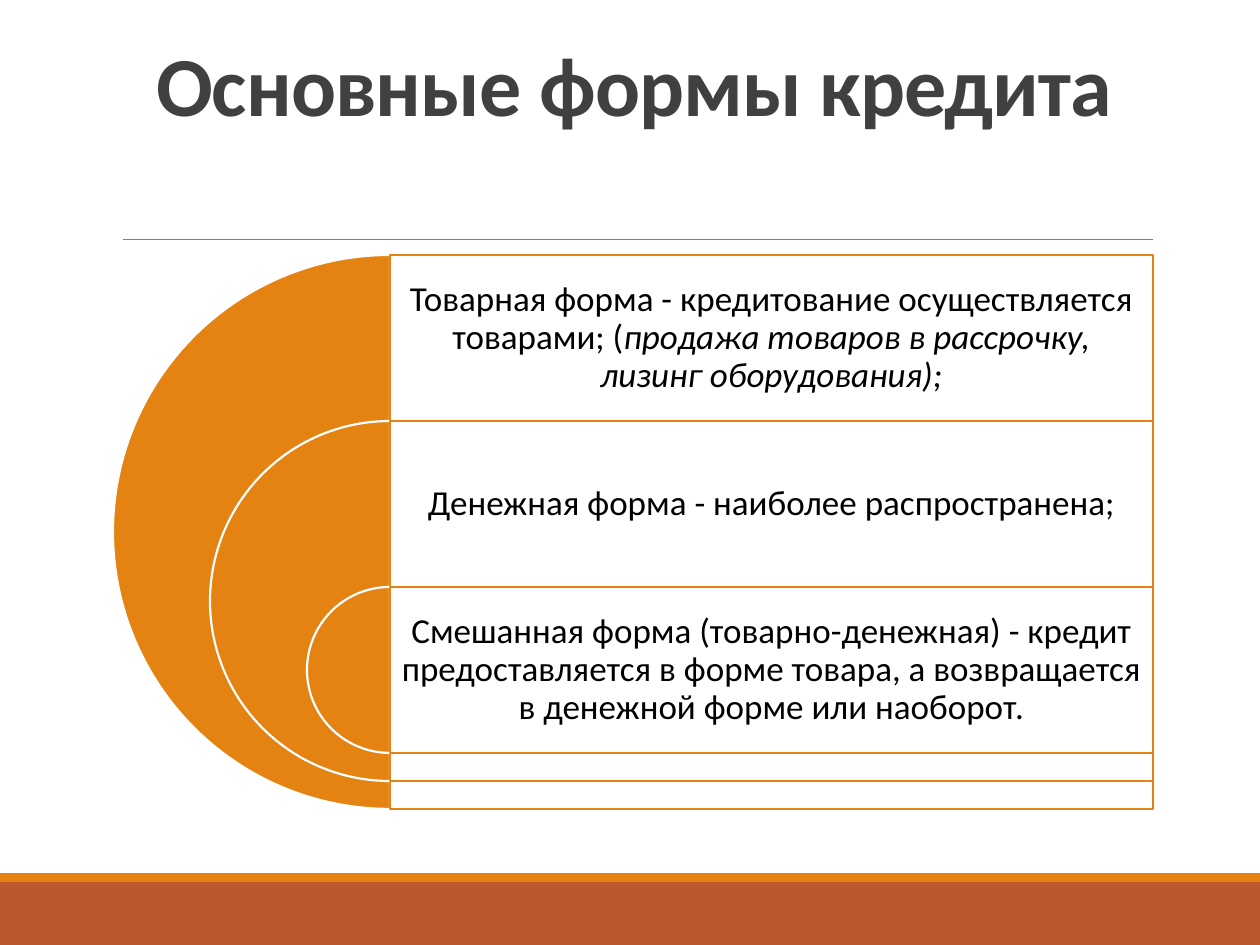
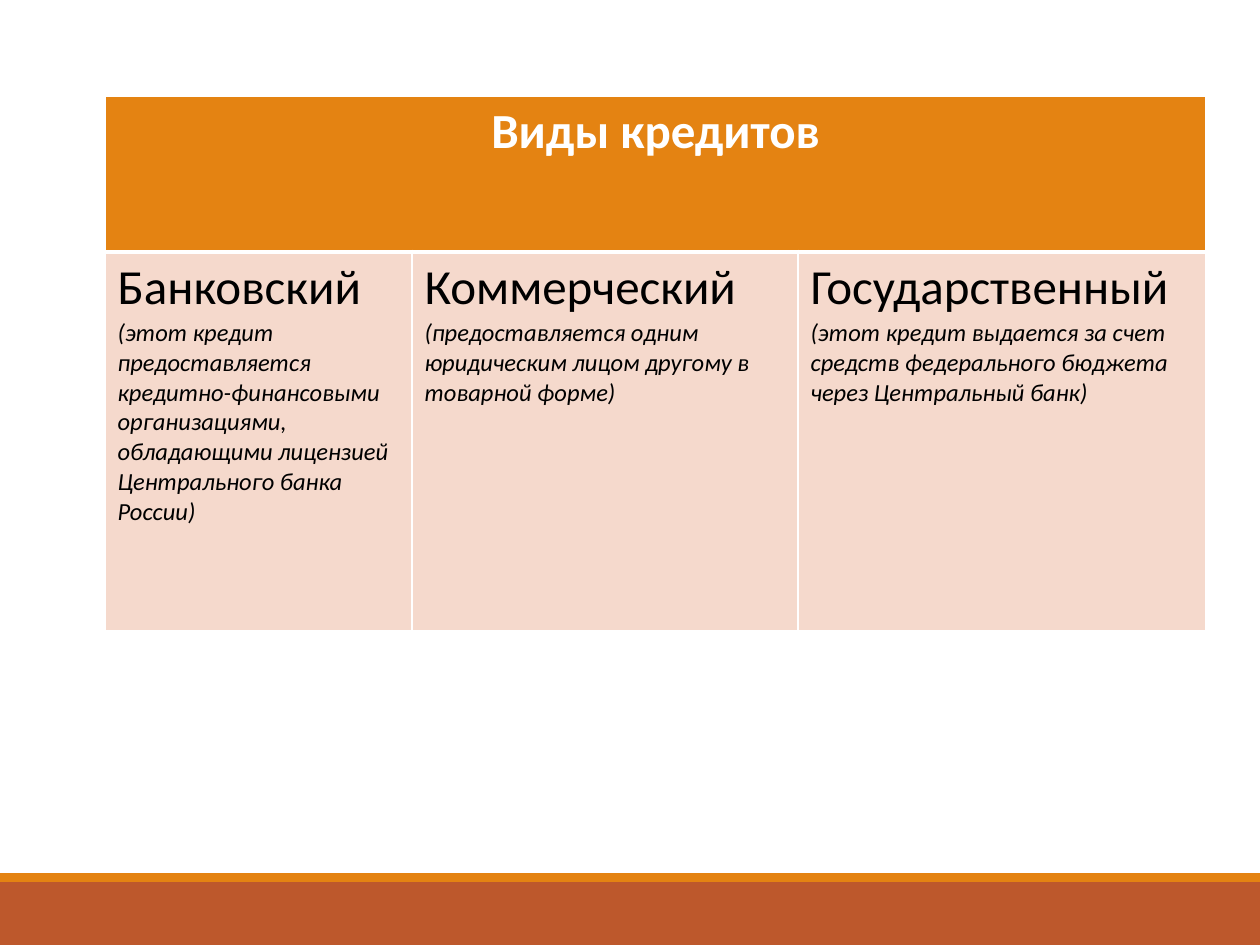
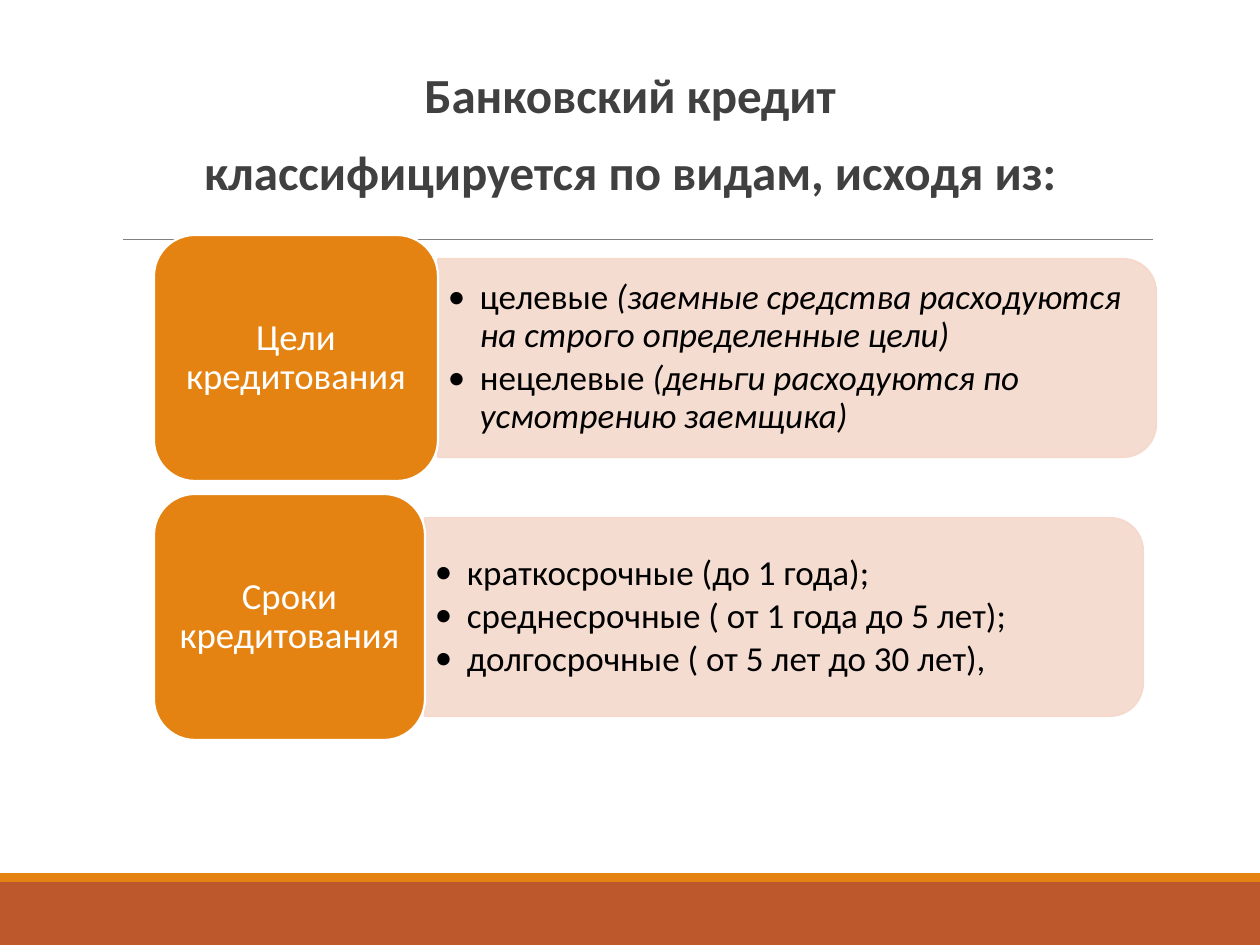
from dataclasses import dataclass

from lxml import etree
from pptx import Presentation
from pptx import util as u
from pptx.dml.color import RGBColor
from pptx.enum import shapes, text
from pptx.oxml.ns import qn

SCALE = u.Inches(1) / 126  # EMU in one px
CENTER = text.PP_ALIGN.CENTER
MIDDLE = text.MSO_ANCHOR.MIDDLE


@dataclass(frozen=True)
class Theme:
    font: str = "Calibri"
    orange: str = "E48312"
    rust: str = "BD582C"
    blush: str = "F5D9CC"
    white: str = "FFFFFF"
    black: str = "000000"
    heading: str = "404040"
    rule: str = "808080"
    title: int = 48
    subtitle: int = 28
    label: int = 21
    body: int = 20
    note: int = 14
    outline: float = 1.25
    hairline: float = 0.5


@dataclass(frozen=True)
class Span:
    text: str
    size: int = Theme.body
    color: str = Theme.black
    bold: bool = False
    italic: bool = False


def px(*lengths):
    return [u.Emu(round(length * SCALE)) for length in lengths]


def rgb(color):
    return RGBColor.from_string(color)


def add_alpha(element, percent):
    for color in element.iter(qn("a:srgbClr")):
        etree.SubElement(color, qn("a:alpha")).set("val", str(percent * 1000))


def add_bullet(para, indent):
    properties = para._p.get_or_add_pPr()
    width = px(indent)[0]
    properties.set("marL", str(width))
    properties.set("indent", str(-width))
    etree.SubElement(properties, qn("a:buFont")).set("typeface", Theme.font)
    etree.SubElement(properties, qn("a:buChar")).set("char", "•")


def add_borders(cell, color, **widths):
    """Draw cell edges; widths maps L, R, T, B to points. Call before the fill is set."""
    properties = cell._tc.get_or_add_tcPr()
    for side, width in widths.items():
        line = etree.SubElement(properties, qn(f"a:ln{side}"), w=str(u.Pt(width)))
        fill = etree.SubElement(line, qn("a:solidFill"))
        etree.SubElement(fill, qn("a:srgbClr"), val=color)


class Deck:
    def __init__(self, theme):
        self.theme = theme
        self.deck = Presentation()
        self.deck.slide_width, self.deck.slide_height = px(1260, 945)
        self.page = None

    def add_page(self):
        theme = self.theme
        self.page = self.deck.slides.add_slide(self.deck.slide_layouts[6])
        rect = shapes.MSO_SHAPE.RECTANGLE
        self.shape(rect, (0, 882, 1260, 63), theme.rust)
        self.shape(rect, (0, 873, 1260, 9), theme.orange)
        self.rule(123, 239, 1153)

    def rule(self, left, top, right):
        line = self.page.shapes.add_connector(
            shapes.MSO_CONNECTOR.STRAIGHT, *px(left, top, right, top))
        line.line.color.rgb = rgb(self.theme.rule)
        line.line.width = u.Pt(self.theme.hairline)
        etree.SubElement(line._element.spPr, qn("a:effectLst"))

    def shape(self, kind, box, fill, line=None, alpha=None):
        shape = self.page.shapes.add_shape(kind, *px(*box))
        shape.shadow.inherit = False
        shape.fill.solid()
        shape.fill.fore_color.rgb = rgb(fill)
        if alpha:
            add_alpha(shape._element.spPr, alpha)
        if line:
            shape.line.color.rgb = rgb(line)
            shape.line.width = u.Pt(self.theme.outline)
        else:
            shape.line.fill.background()
        return shape

    def set_spans(self, frame, paragraphs, align=None, spacing=None, before=None,
                  after=None, bullet_indent=None):
        """Fill a text frame; each paragraph is a list of spans."""
        for index, spans in enumerate(paragraphs):
            para = frame.add_paragraph() if index else frame.paragraphs[0]
            para.alignment = align
            para.line_spacing = spacing
            if before is not None:
                para.space_before = u.Pt(before)
            if after is not None:
                para.space_after = u.Pt(after)
            if bullet_indent:
                add_bullet(para, bullet_indent)
            for span in spans:
                run = para.add_run()
                run.text = span.text
                font = run.font
                font.name, font.size = self.theme.font, u.Pt(span.size)
                font.bold, font.italic = span.bold, span.italic
                font.color.rgb = rgb(span.color)

    def frame(self, shape, insets, anchor):
        frame = shape.text_frame
        frame.word_wrap = True
        frame.vertical_anchor = anchor
        side, edge = px(*insets)
        frame.margin_left = frame.margin_right = side
        frame.margin_top = frame.margin_bottom = edge
        return frame

    def text(self, box, paragraphs, insets=(10, 10), anchor=MIDDLE, **style):
        shape = self.page.shapes.add_textbox(*px(*box))
        frame = self.frame(shape, insets, anchor)
        self.set_spans(frame, paragraphs, **style)
        return frame

    def title(self, box, words):
        theme = self.theme
        span = Span(words, theme.title, theme.heading, bold=True)
        frame = self.text(box, [[span]], insets=(12, 6),
                          anchor=text.MSO_ANCHOR.BOTTOM, spacing=0.85)
        frame.paragraphs[0].runs[0].font._element.set("spc", "-50")

    def half_circle(self, center_x, top, diameter):
        """Left half of a circle whose flat side stands at center_x."""
        box = (center_x - diameter // 2, top, diameter, diameter)
        pie = self.shape(shapes.MSO_SHAPE.PIE, box, self.theme.orange,
                         self.theme.white)
        pie.adjustments[0], pie.adjustments[1] = 54, 162

    def label(self, box, words):
        theme = self.theme
        shape = self.shape(shapes.MSO_SHAPE.ROUNDED_RECTANGLE, box,
                           theme.orange, theme.white)
        frame = self.frame(shape, (11, 5), MIDDLE)
        self.set_spans(frame, [[Span(words, theme.label, theme.white)]],
                       align=CENTER, spacing=0.9)

    def bullet_panel(self, box, paragraphs):
        """Panel with rounded right corners and a bulleted list over it."""
        left, top, width, height = box
        shift = (width - height) // 2
        turned = (left + shift, top - shift, height, width)
        panel = self.shape(shapes.MSO_SHAPE.ROUND_2_SAME_RECTANGLE, turned,
                           self.theme.blush, self.theme.blush, alpha=90)
        panel.rotation = 90
        self.text((left, top + 10, width - 10, height - 20), paragraphs,
                  insets=(10, 5), spacing=0.9, after=3, bullet_indent=32)

    def table(self, left, top, widths, heights, heading, cells):
        theme = self.theme
        box = px(left, top, sum(widths), sum(heights))
        table = self.page.shapes.add_table(len(heights), len(widths), *box).table
        for column, width in zip(table.columns, px(*widths)):
            column.width = width
        for row, height in zip(table.rows, px(*heights)):
            row.height = height
        for index, fill in enumerate((theme.orange, theme.blush)):
            for cell in table.rows[index].cells:
                top_edge, bottom_edge = (3, 1) if index else (1, 3)
                add_borders(cell, theme.white, L=1, R=1, T=top_edge, B=bottom_edge)
                cell.fill.solid()
                cell.fill.fore_color.rgb = rgb(fill)
        table.cell(0, 0).merge(table.cell(0, len(widths) - 1))
        self.set_spans(table.cell(0, 0).text_frame, [[heading]], align=CENTER)
        for column, paragraphs in enumerate(cells):
            self.set_spans(table.cell(1, column).text_frame, paragraphs)


def credit_forms(deck):
    theme = deck.theme
    deck.add_page()
    deck.title((144, 42, 1042, 98), "Основные формы кредита")
    forms = [
        [Span("Товарная форма - кредитование осуществляется товарами; ("),
         Span("продажа товаров в рассрочку, лизинг оборудования);", italic=True)],
        [Span("Денежная форма - наиболее распространена;")],
        [Span("Смешанная форма (товарно-денежная) - кредит предоставляется в форме "
              "товара, а возвращается в денежной форме или наоборот.")],
    ]
    left, width, row_height = 390, 763, 166
    for index, spans in enumerate(forms):
        top = 255 + row_height * index
        size = 554 - 194 * index
        deck.half_circle(left, top, size)
        deck.shape(shapes.MSO_SHAPE.RECTANGLE, (left, top, width, size),
                   theme.white, theme.orange, alpha=90)
        deck.text((left, top, width, row_height), [spans], align=CENTER, spacing=0.9)


def credit_kinds(deck):
    theme = deck.theme

    def name(words):
        return Span(words, theme.subtitle)

    def note(words):
        return Span(words, theme.note, italic=True)

    deck.add_page()
    deck.table(
        105, 96, (307, 386, 408), (156, 379),
        Span("Виды кредитов", theme.subtitle, theme.white, bold=True),
        [
            [[name("Банковский "),
              note("(этот кредит предоставляется кредитно-финансовыми организациями, "
                   "обладающими лицензией Центрального банка России)")]],
            [[name("Коммерческий")],
             [note("(предоставляется одним юридическим лицом другому "
                   "в товарной форме)")]],
            [[name("Государственный "),
              note("(этот кредит выдается за счет средств федерального бюджета "
                   "через Центральный банк)")]],
        ])


def bank_credit(deck):
    theme = deck.theme
    deck.add_page()
    heading = ("Банковский кредит", "классифицируется по видам, исходя из:")
    deck.text((74, 65, 1112, 754),
              [[Span(line, theme.subtitle, theme.heading, bold=True)]
               for line in heading],
              insets=(0, 6), anchor=text.MSO_ANCHOR.TOP,
              align=CENTER, spacing=0.9, before=12, after=2)
    groups = [
        ("Цели кредитования", 284, [
            [Span("целевые "),
             Span("(заемные средства расходуются на строго определенные цели)",
                  italic=True)],
            [Span("нецелевые "),
             Span("(деньги расходуются по усмотрению заемщика)", italic=True)]]),
        ("Сроки кредитования", 271, [
            [Span("краткосрочные (до 1 года);")],
            [Span("среднесрочные ( от 1 года до 5 лет);")],
            [Span("долгосрочные ( от 5 лет до 30 лет),")]]),
    ]
    left, height = 154, 246
    for index, (words, width, paragraphs) in enumerate(groups):
        top = 235 + 259 * index
        deck.bullet_panel((left + width, top + 24, 718, 198), paragraphs)
        deck.label((left, top, width, height), words)


def main():
    deck = Deck(Theme())
    credit_forms(deck)
    credit_kinds(deck)
    bank_credit(deck)
    deck.deck.save("out.pptx")


if __name__ == "__main__":
    main()
